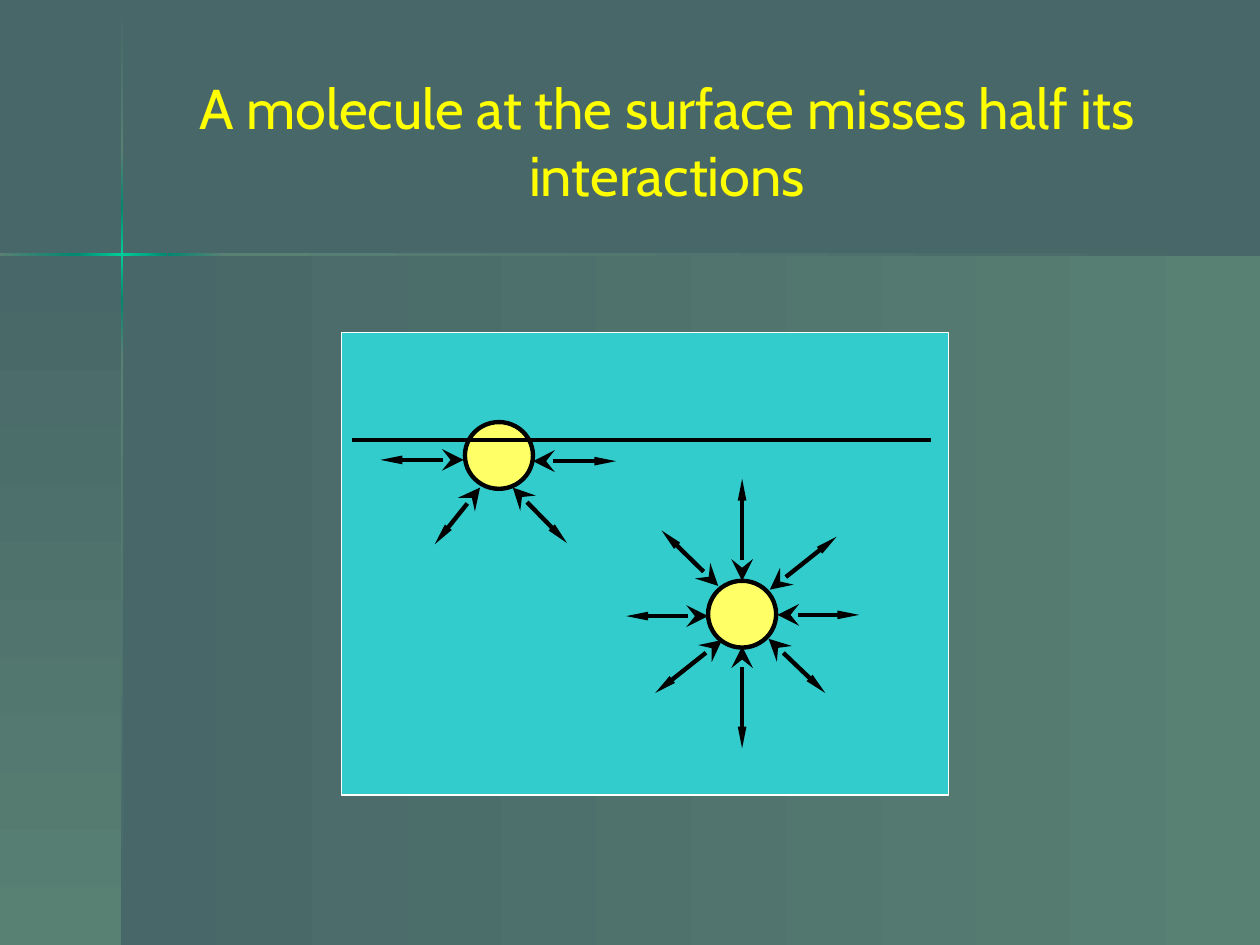
from copy import deepcopy

from lxml.etree import SubElement
from pptx import Presentation
from pptx.dml.color import RGBColor
from pptx.enum.shapes import MSO_CONNECTOR, MSO_SHAPE
from pptx.enum.text import MSO_ANCHOR, PP_ALIGN
from pptx.oxml.ns import qn
from pptx.util import Inches, Pt

COLUMNS, ROWS = 100, 75
SLATE, SAGE, TEAL, MINT = "486768", "588073", "008871", "00CC99"
BLACK, WHITE = "000000", "FFFFFF"
ACROSS, DOWN = 0, 270
CROSS_X, CROSS_Y, HAIR = 9.6, 20.1, 0.2
PANEL_X, PANEL_Y = 9.7, 20.2

PANELS = [
    (PANEL_X, PANEL_Y, COLUMNS - PANEL_X, ROWS - PANEL_Y, ACROSS),
    (0, PANEL_Y, PANEL_X, ROWS - PANEL_Y, DOWN),
]
VERTICAL_RAYS = [
    (0.1, 12.1, (SLATE, SAGE)),
    (28.2, 75, (SAGE, SLATE)),
    (23.8, 28.2, (TEAL, SAGE)),
    (12.1, 16.5, (SAGE, TEAL)),
    (16.5, 23.8, (TEAL, MINT, TEAL)),
]
HORIZONTAL_RAYS = [
    (17.7, 100, (SAGE, SLATE)),
    (0, 6.1, (SAGE, TEAL)),
    (13.3, 17.7, (TEAL, SAGE)),
    (6, 13.3, (TEAL, MINT, TEAL)),
]
MOLECULES = [(36.9, 33.5), (56.2, 46.1)]
SURFACE_PULLS = [
    ((36.8, 36.5), (30.2, 36.5)),
    ((38.1, 38.7), (34.5, 43.2)),
    ((40.7, 38.7), (45, 43.1)),
    ((42.3, 36.6), (48.9, 36.6)),
]
BULK_PULLS = [
    ((57.3, 50.8), (52, 55)),
    ((58.9, 51.3), (58.9, 59.4)),
    ((61, 50.7), (65.5, 55)),
    ((61.7, 48.8), (68.2, 48.8)),
    ((61.1, 46.8), (66.4, 42.6)),
    ((58.9, 46.1), (58.9, 38)),
    ((57, 46.5), (52.5, 42.1)),
    ((56.2, 48.9), (49.7, 48.9)),
]


def color(value):
    return RGBColor.from_string(value)


def apply(target, values):
    for name, value in values.items():
        setattr(target, name, value)


class Sketch:
    """Holds the deck, its current slide and the shared style."""

    font = "Cabin"
    stroke = 2.5

    def __init__(self, background):
        self.deck = Presentation()
        apply(self.deck, {"slide_width": Inches(10), "slide_height": Inches(7.5)})
        self.page = self.deck.slides.add_slide(self.deck.slide_layouts[6])
        fill = self.page.background.fill
        fill.solid()
        fill.fore_color.rgb = color(background)

    def place(self, x, y):
        width, height = self.deck.slide_width, self.deck.slide_height
        return round(x * width / COLUMNS), round(y * height / ROWS)

    def shape(self, kind, x, y, width, height):
        shape = self.page.shapes.add_shape(kind, *self.place(x, y), *self.place(width, height))
        shape.shadow.inherit = False
        return shape

    def outline(self, line, tint, weight):
        line.fill.solid()
        apply(line, {"width": Pt(weight)})
        line.color.rgb = color(tint)

    def solid(self, kind, bounds, tint, edge, weight):
        shape = self.shape(kind, *bounds)
        shape.fill.solid()
        shape.fill.fore_color.rgb = color(tint)
        self.outline(shape.line, edge, weight)

    def blend(self, bounds, angle, tints):
        shape = self.shape(MSO_SHAPE.RECTANGLE, *bounds)
        shape.line.fill.background()
        shape.fill.gradient()
        shape.fill.gradient_angle = angle
        stop_list = shape._element.spPr.find(".//" + qn("a:gsLst"))
        for _ in tints[2:]:
            stop_list.append(deepcopy(stop_list[-1]))
        for index, (stop, tint) in enumerate(zip(shape.fill.gradient_stops, tints)):
            stop.position = index / (len(tints) - 1)
            stop.color.rgb = color(tint)

    def line(self, start, end):
        line = self.page.shapes.add_connector(
            MSO_CONNECTOR.STRAIGHT, *self.place(*start), *self.place(*end))
        self.outline(line.line, BLACK, self.stroke)
        SubElement(line._element.spPr, qn("a:effectLst"))
        return line

    def pull(self, near, far):
        stroke = self.line(near, far).line._get_or_add_ln()
        SubElement(stroke, qn("a:headEnd"), type="stealth", w="lg", len="lg")
        SubElement(stroke, qn("a:tailEnd"), type="triangle", w="sm", len="lg")

    def title(self, text, bounds, size, tint):
        x, y, width, height = bounds
        box = self.page.shapes.add_textbox(*self.place(x, y), *self.place(width, height))
        apply(box.text_frame, {"word_wrap": True, "vertical_anchor": MSO_ANCHOR.MIDDLE})
        para = box.text_frame.paragraphs[0]
        para.alignment = PP_ALIGN.CENTER
        span = para.add_run()
        span.text = text
        apply(span.font, {"name": self.font, "size": Pt(size)})
        span.font.color.rgb = color(tint)


def main():
    sketch = Sketch(SLATE)
    for *bounds, angle in PANELS:
        sketch.blend(bounds, angle, (SLATE, SAGE))
    for top, bottom, tints in VERTICAL_RAYS:
        sketch.blend((CROSS_X, top, HAIR, bottom - top), DOWN, tints)
    for left, right, tints in HORIZONTAL_RAYS:
        sketch.blend((left, CROSS_Y, right - left, HAIR), ACROSS, tints)
    sketch.solid(MSO_SHAPE.RECTANGLE, (27.1, 26.4, 48.2, 36.7), "33CCCC", WHITE, 0.75)
    sketch.title("A molecule at the surface misses half its interactions",
                 (11.7, 3.3, 82.5, 15.7), 32, "FFFF00")
    for x, y in MOLECULES:
        sketch.solid(MSO_SHAPE.OVAL, (x, y, 5.4, 5.3), "FFFF66", BLACK, sketch.stroke)
    sketch.line((27.9, 34.9), (73.9, 34.9))
    for near, far in SURFACE_PULLS + BULK_PULLS:
        sketch.pull(near, far)
    sketch.deck.save("out.pptx")


if __name__ == "__main__":
    main()
